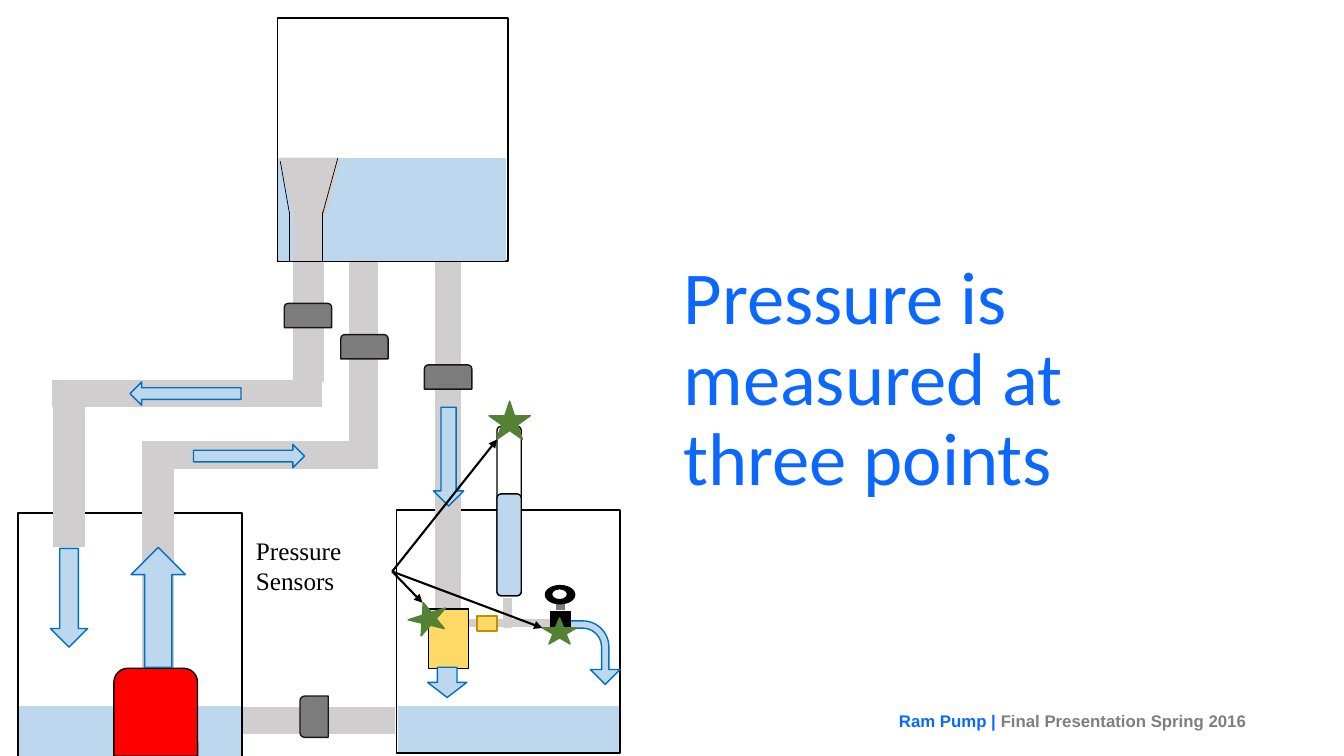
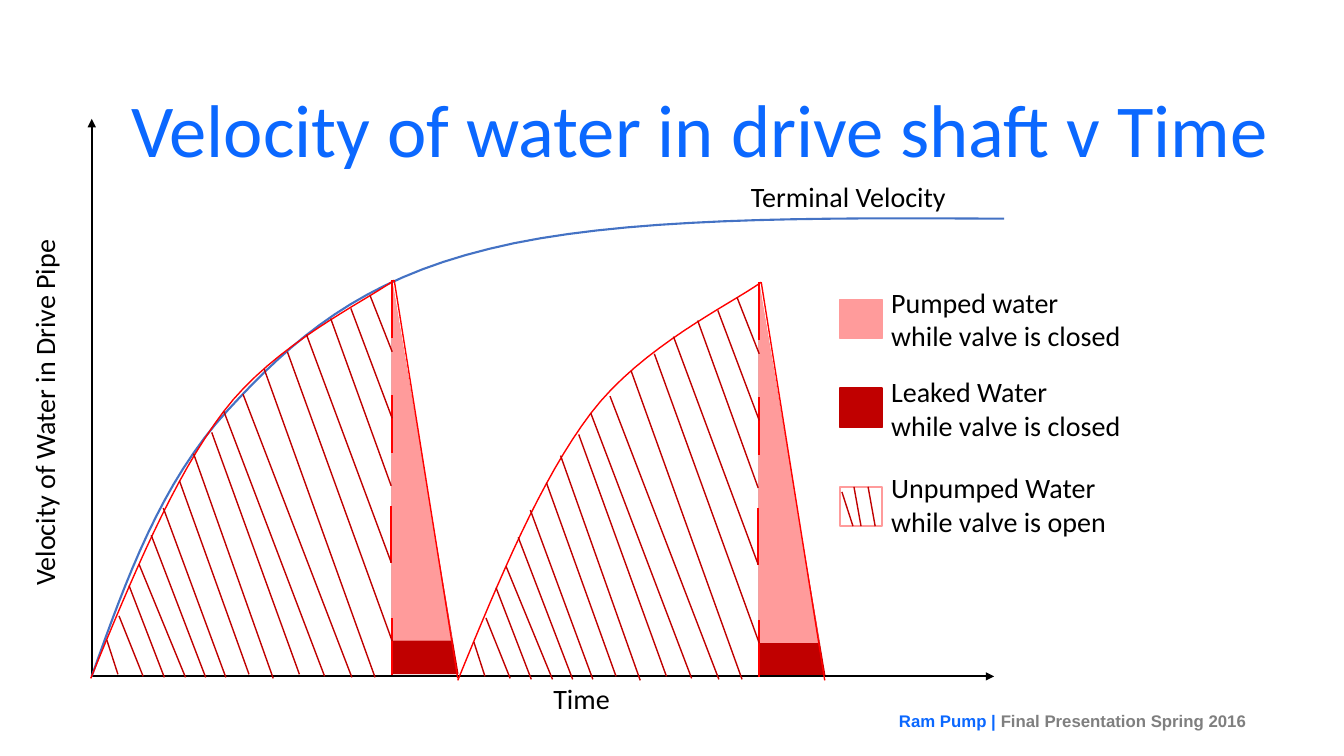
"""Builds two ram pump slides: the test rig diagram and the drive pipe velocity chart."""
from lxml import etree
from pptx import Presentation
from pptx.dml.color import RGBColor
from pptx.enum.shapes import MSO_CONNECTOR, MSO_SHAPE
from pptx.enum.text import MSO_ANCHOR, MSO_AUTO_SIZE, PP_ALIGN
from pptx.oxml.ns import qn
from pptx.util import Inches, Pt

BLUE = RGBColor(0x0B, 0x68, 0xFF)
FOOTER_GRAY = RGBColor(0x7F, 0x7F, 0x7F)
BLACK = RGBColor(0, 0, 0)
WHITE = RGBColor(0xFF, 0xFF, 0xFF)
RED = RGBColor(0xFF, 0, 0)
DARK_RED = RGBColor(0xC0, 0, 0)
PINK = RGBColor(0xFF, 0x9B, 0x9B)
GREEN = RGBColor(0x54, 0x82, 0x35)
YELLOW = RGBColor(0xFF, 0xD9, 0x66)
GOLD = RGBColor(0xBF, 0x90, 0)
PIPE_GRAY = RGBColor(0xD0, 0xCE, 0xCE)
VALVE_GRAY = RGBColor(0x7C, 0x7C, 0x7C)
VALVE_EDGE = RGBColor(0x18, 0x17, 0x17)
WATER_BLUE = RGBColor(0xBD, 0xD7, 0xEE)
FLOW_EDGE = RGBColor(0, 0x70, 0xC0)
CURVE_BLUE = RGBColor(0x44, 0x72, 0xC4)

PIPE = (PIPE_GRAY, PIPE_GRAY)
TANK = (WHITE, BLACK)
WATER = (WATER_BLUE, WATER_BLUE)
FLOW = (WATER_BLUE, FLOW_EDGE)
VALVE = (VALVE_GRAY, VALVE_EDGE)
SENSOR = (GREEN, GREEN)
PUMPED = (PINK, PINK)
LEAKED = (DARK_RED, DARK_RED)
UNPUMPED = (None, PINK)

RECT = MSO_SHAPE.RECTANGLE
ROUND_RECT = MSO_SHAPE.ROUNDED_RECTANGLE
ROUND_TOP = MSO_SHAPE.ROUND_2_SAME_RECTANGLE
TRAPEZOID = MSO_SHAPE.TRAPEZOID
ELLIPSE = MSO_SHAPE.OVAL
STAR = MSO_SHAPE.STAR_5_POINT
RIGHT_TRIANGLE = MSO_SHAPE.RIGHT_TRIANGLE
DOWN_ARROW = MSO_SHAPE.DOWN_ARROW
UP_ARROW = MSO_SHAPE.UP_ARROW
RIGHT_ARROW = MSO_SHAPE.RIGHT_ARROW
LEFT_ARROW = MSO_SHAPE.LEFT_ARROW
BENT_ARROW = MSO_SHAPE.BENT_ARROW
STRAIGHT = MSO_CONNECTOR.STRAIGHT
TOP, MIDDLE, BOTTOM = MSO_ANCHOR.TOP, MSO_ANCHOR.MIDDLE, MSO_ANCHOR.BOTTOM
RIGHT = PP_ALIGN.RIGHT
FIT_SHAPE = MSO_AUTO_SIZE.SHAPE_TO_FIT_TEXT

CYCLE_OFFSETS = ((0, 0), (3.64, 0.02))
RISE = ((0.9, 6.73), (1.31, 5.73), (1.72, 4.74), (2.22, 4.08),
        (2.72, 3.42), (3.62, 2.99), (3.91, 2.78))
TERMINAL_CURVE = ((0.91, 6.71), (1.25, 5.75), (1.6, 4.78), (2.26, 4.07),
                  (2.91, 3.36), (3.57, 2.78), (4.85, 2.47),
                  (6.13, 2.15), (8.05, 2.16), (9.96, 2.17))
HATCH = (
    (1.06, 6.35, 1.17, 6.69), (1.18, 6.11, 1.42, 6.71), (1.28, 5.81, 1.63, 6.72),
    (1.38, 5.6, 1.84, 6.72), (1.5, 5.31, 2.04, 6.72), (1.62, 5.04, 2.24, 6.72),
    (1.78, 4.77, 2.47, 6.69), (1.92, 4.5, 2.71, 6.73), (2.1, 4.29, 2.97, 6.69),
    (2.22, 4.08, 3.22, 6.71), (2.41, 3.91, 3.49, 6.72), (2.62, 3.66, 3.72, 6.72),
    (2.85, 3.49, 3.89, 6.36), (3.04, 3.32, 3.88, 5.58), (3.28, 3.16, 3.88, 4.82),
    (3.48, 3.06, 3.89, 4.15), (3.67, 2.93, 3.89, 3.49),
)
VALVE_DASHES = ((3.89, 2.78), (3.89, 3.92), (3.88, 5.02), (3.89, 6.13))


def add_parts(s, kind, style, *boxes, rot=0):
    """Draw one preset shape in each box and return the last one."""
    fill, edge = style
    for box in boxes:
        sp = s.shapes.add_shape(kind, *map(Inches, box))
        sp.shadow.inherit = False
        if fill is None:
            sp.fill.background()
        else:
            sp.fill.solid()
            sp.fill.fore_color.rgb = fill
        sp.line.color.rgb = edge
        sp.line.width = Pt(1)
        sp.rotation = rot
    return sp


def add_lines(s, color, width, *ends, arrow=False, offset=(0, 0)):
    """Draw straight lines given as x1, y1, x2, y2."""
    dx, dy = offset
    for x1, y1, x2, y2 in ends:
        line = s.shapes.add_connector(
            STRAIGHT, Inches(x1 + dx), Inches(y1 + dy), Inches(x2 + dx), Inches(y2 + dy))
        line.line.color.rgb = color
        line.line.width = Pt(width)
        if arrow:
            etree.SubElement(line.line._get_or_add_ln(), qn("a:tailEnd"), type="triangle")
        etree.SubElement(line._element.spPr, qn("a:effectLst"))


def bezier_points(knots, steps=16):
    """Sample a chain of cubic Bezier segments."""
    points = [knots[0]]
    for i in range(0, len(knots) - 1, 3):
        a, b, c, d = knots[i:i + 4]
        for n in range(1, steps + 1):
            t = n / steps
            u = 1 - t
            weights = (u ** 3, 3 * u * u * t, 3 * u * t * t, t ** 3)
            points.append(tuple(sum(w * k[axis] for w, k in zip(weights, (a, b, c, d)))
                                for axis in (0, 1)))
    return points


def add_curve(s, knots, color, width, offset=(0, 0)):
    """Draw an open smooth curve."""
    dx, dy = offset
    points = [(Inches(x + dx), Inches(y + dy)) for x, y in bezier_points(knots)]
    builder = s.shapes.build_freeform(*points[0])
    builder.add_line_segments(points[1:], close=False)
    sp = builder.convert_to_shape()
    sp.shadow.inherit = False
    sp.fill.background()
    sp.line.color.rgb = color
    sp.line.width = Pt(width)


def format_run(r, font, size, color, bold=False):
    """Set the character format of a run."""
    r.font.name = font
    r.font.size = Pt(size)
    r.font.color.rgb = color
    r.font.bold = bold


def add_text(s, box, text, size=20, font="Calibri", color=BLACK, rot=0):
    """Add a label that does not wrap."""
    sp = s.shapes.add_textbox(*map(Inches, box))
    sp.rotation = rot
    tf = sp.text_frame
    tf.word_wrap = False
    tf.auto_size = FIT_SHAPE
    tf.vertical_anchor = TOP
    tf.text = text
    for p in tf.paragraphs:
        format_run(p.runs[0], font, size, color)


def add_title(s, box, text):
    """Add the slide title, resting on the bottom of its box."""
    tf = s.shapes.add_textbox(*map(Inches, box)).text_frame
    tf.word_wrap = True
    tf.vertical_anchor = BOTTOM
    tf.margin_left = tf.margin_right = tf.margin_top = tf.margin_bottom = Inches(0.18)
    tf.text = text
    p = tf.paragraphs[0]
    p.line_spacing = 0.9
    format_run(p.runs[0], "Calibri", 53.3, BLUE)


def add_footer(s):
    """Add the two-coloured footer."""
    tf = s.shapes.add_textbox(Inches(7.96), Inches(6.95), Inches(4.5), Inches(0.4)).text_frame
    tf.word_wrap = True
    tf.vertical_anchor = MIDDLE
    p = tf.paragraphs[0]
    p.alignment = RIGHT
    for text, color in (("Ram Pump | ", BLUE), ("Final Presentation Spring 2016", FOOTER_GRAY)):
        r = p.add_run()
        r.text = text
        format_run(r, "Arial", 12, color, bold=True)


def add_slide(prs, title_box, title):
    """Add a blank slide with title and footer."""
    s = prs.slides.add_slide(prs.slide_layouts[6])
    add_title(s, title_box, title)
    add_footer(s)
    return s


def draw_tanks_and_pipes(s):
    """Draw the three tanks, their water, the pipes and the overflow funnel."""
    add_parts(s, RECT, TANK, (3.93, 5.06, 2.22, 2.41), (0.18, 5.09, 2.22, 2.41),
              (2.75, 0.18, 2.29, 2.41))
    add_parts(s, RECT, WATER, (3.95, 7.01, 2.18, 0.44), (0.2, 7.01, 2.18, 0.49),
              (2.76, 1.57, 2.25, 1.01))
    add_parts(s, RECT, PIPE,
              (3.47, 2.59, 0.27, 1.81), (4.32, 2.59, 0.25, 3.44), (2.91, 2.61, 0.3, 1.17),
              (1.73, 4.38, 2.01, 0.27), (0.52, 3.78, 2.67, 0.25), (0.53, 3.88, 0.31, 1.54),
              (1.42, 4.38, 0.3, 2.25), (4.66, 6.15, 0.88, 0.06), (5.0, 5.94, 0.07, 0.28),
              (2.91, 2.1, 0.29, 0.49), (2.42, 7.02, 1.49, 0.26))
    add_parts(s, TRAPEZOID, PIPE, (2.78, 1.57, 0.59, 0.54), rot=180)
    add_lines(s, BLACK, 0.5, (2.75, 2.59, 5.04, 2.59), (3.2, 2.59, 3.2, 2.1),
              (2.87, 2.59, 2.87, 2.1), (3.2, 2.12, 3.35, 1.57), (2.87, 2.11, 2.78, 1.6))


def draw_pumps_and_valves(s):
    """Draw the pumps, air chamber, valves and outlet tap."""
    add_parts(s, RECT, (YELLOW, BLACK), (4.25, 6.04, 0.4, 0.59))
    add_parts(s, ROUND_TOP, (RED, BLACK), (1.13, 6.63, 0.83, 0.87))
    add_parts(s, ROUND_RECT, TANK, (4.93, 4.23, 0.24, 1.68))
    add_parts(s, ROUND_RECT, (WATER_BLUE, BLACK), (4.93, 4.9, 0.24, 1.01))
    add_parts(s, ROUND_TOP, VALVE, (2.82, 3.01, 0.47, 0.24), (3.38, 3.32, 0.47, 0.24),
              (4.21, 3.62, 0.47, 0.24))
    add_parts(s, ROUND_TOP, VALVE, (2.91, 6.97, 0.41, 0.28), rot=270)
    add_parts(s, RECT, (YELLOW, GOLD), (4.73, 6.11, 0.2, 0.15))


def draw_flow(s):
    """Draw the arrows that show the flow of water, and the tap."""
    outlet = add_parts(s, BENT_ARROW, FLOW, (5.54, 6.18, 0.63, 0.59), rot=90)
    for i, value in enumerate((0.122, 0.25, 0.25, 0.438)):
        outlet.adjustments[i] = value
    add_parts(s, DOWN_ARROW, FLOW, (0.5, 5.44, 0.37, 0.98), (4.3, 4.04, 0.3, 0.98),
              (4.24, 6.62, 0.39, 0.3))
    add_parts(s, UP_ARROW, FLOW, (1.3, 5.43, 0.54, 1.19))
    add_parts(s, RIGHT_ARROW, FLOW, (1.92, 4.41, 1.1, 0.23))
    add_parts(s, LEFT_ARROW, FLOW, (1.29, 3.79, 1.1, 0.23))
    add_parts(s, RECT, (BLACK, BLACK), (5.46, 6.07, 0.2, 0.18))
    add_parts(s, RECT, (VALVE_GRAY, VALVE_GRAY), (5.52, 5.97, 0.08, 0.08))
    add_parts(s, ELLIPSE, (BLACK, BLACK), (5.41, 5.81, 0.29, 0.18))
    add_parts(s, ELLIPSE, TANK, (5.47, 5.84, 0.16, 0.11))


def draw_sensors(s):
    """Mark the three pressure sensors and label them."""
    add_parts(s, STAR, SENSOR, (4.05, 5.97, 0.39, 0.31), rot=342.4)
    add_parts(s, STAR, SENSOR, (4.85, 3.98, 0.41, 0.38), (5.38, 6.13, 0.34, 0.26))
    targets = ((4.93, 4.36), (4.19, 5.98), (5.38, 6.23))
    add_lines(s, BLACK, 1.5, *((3.89, 5.67, x, y) for x, y in targets), arrow=True)
    add_text(s, (2.44, 5.26, 1.45, 0.83), "Pressure\nSensors", 18, "Times New Roman")


def draw_cycle_areas(s, offset):
    """Fill the leaked and pumped areas of one pump cycle."""
    dx, dy = offset
    add_parts(s, RIGHT_TRIANGLE, LEAKED, (3.89 + dx, 2.84 + dy, 0.65, 3.84))
    add_parts(s, RIGHT_TRIANGLE, PUMPED, (3.89 + dx, 2.82 + dy, 0.59, 3.53))


def draw_cycle_lines(s, offset):
    """Draw the outline, valve line and hatching of one pump cycle."""
    add_curve(s, RISE, RED, 1, offset)
    add_lines(s, RED, 1, (3.91, 2.78, 4.54, 6.73), offset=offset)
    add_lines(s, RED, 1.5, *((x, y, x, y + 0.57) for x, y in VALVE_DASHES), offset=offset)
    add_lines(s, DARK_RED, 1, *HATCH, offset=offset)


def draw_legend(s):
    """Draw the three legend entries."""
    entries = ((PUMPED, 2.97, 2.78, "Pumped water\nwhile valve is closed"),
               (LEAKED, 3.85, 3.67, "Leaked Water\nwhile valve is closed"),
               (UNPUMPED, 4.83, 4.62, "Unpumped Water\nwhile valve is open"))
    for style, swatch_y, text_y, text in entries:
        add_parts(s, RECT, style, (8.33, swatch_y, 0.42, 0.39))
        add_text(s, (8.74, text_y, 2.5, 0.77), text)
    add_lines(s, DARK_RED, 1, (8.35, 4.88, 8.46, 5.22), (8.47, 4.83, 8.54, 5.22),
              (8.61, 4.83, 8.68, 5.22))


def build_rig_slide(prs):
    """Build the diagram of the rig with its sensors."""
    s = add_slide(prs, (6.6, 0.82, 5.77, 4.34), "Pressure is measured at three points")
    for draw in (draw_tanks_and_pipes, draw_pumps_and_valves, draw_flow, draw_sensors):
        draw(s)


def build_velocity_slide(prs):
    """Build the velocity against time sketch."""
    s = add_slide(prs, (1.12, 0.88, 12.2, 1.02), "Velocity of water in drive shaft v Time")
    for offset in CYCLE_OFFSETS:
        draw_cycle_areas(s, offset)
    add_lines(s, BLACK, 1.5, (0.91, 6.71, 0.91, 1.18), (0.91, 6.71, 9.86, 6.71), arrow=True)
    add_curve(s, TERMINAL_CURVE, CURVE_BLUE, 1.5)
    for offset in CYCLE_OFFSETS:
        draw_cycle_lines(s, offset)
    add_text(s, (-1.39, 3.86, 3.66, 0.44), "Velocity of Water in Drive Pipe", rot=270)
    add_text(s, (5.39, 6.71, 0.77, 0.44), "Time")
    add_text(s, (7.35, 1.73, 2.15, 0.44), "Terminal Velocity")
    draw_legend(s)


def main():
    """Build and save the presentation."""
    prs = Presentation()
    prs.slide_width, prs.slide_height = Inches(13.33), Inches(7.5)
    build_rig_slide(prs)
    build_velocity_slide(prs)
    prs.save("out.pptx")


if __name__ == "__main__":
    main()
